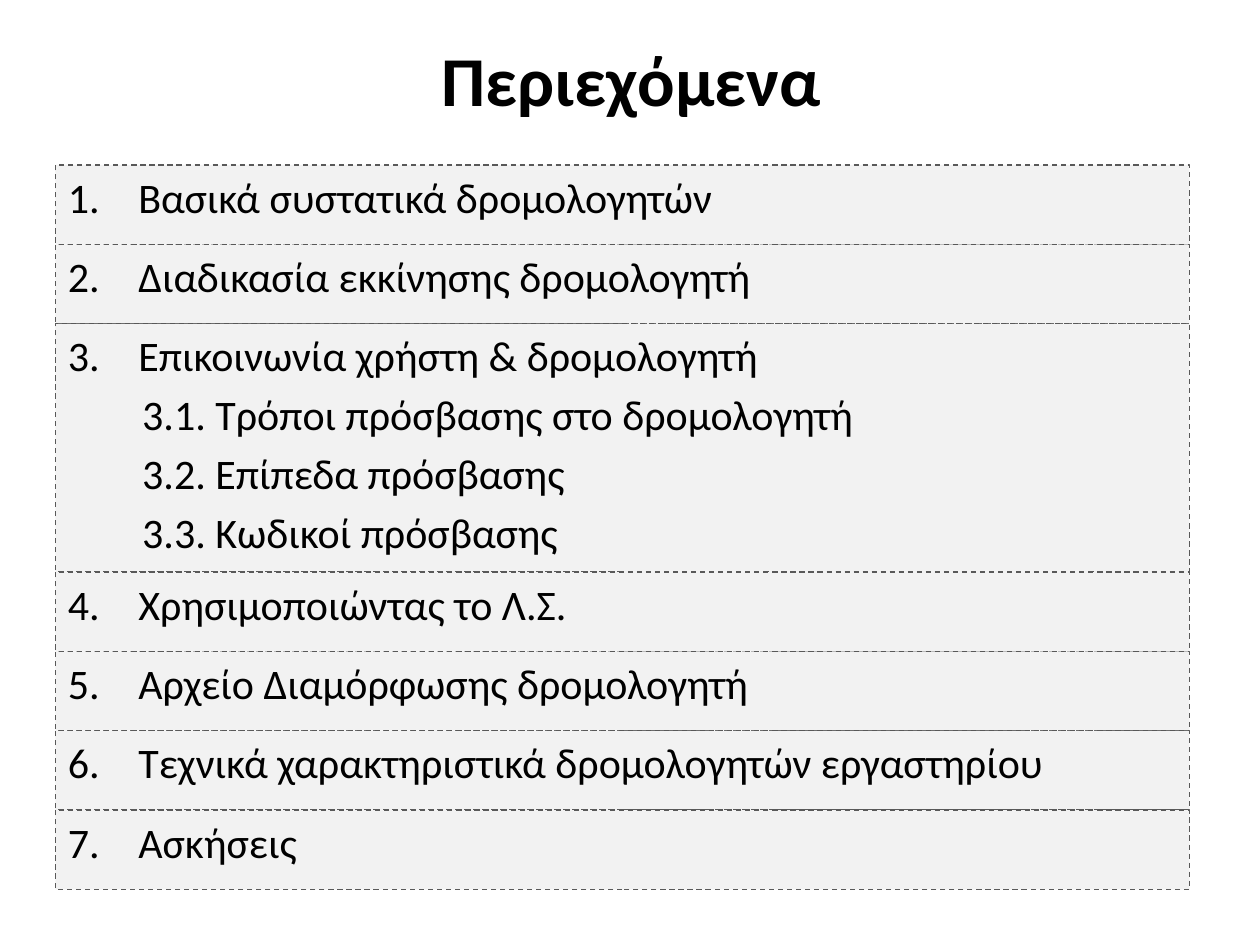
from dataclasses import dataclass

import pptx
import pptx.dml.color
import pptx.enum.dml
import pptx.enum.shapes
import pptx.enum.text
import pptx.oxml.ns
import pptx.util
from lxml import etree

Inches = pptx.util.Inches
Pt = pptx.util.Pt
Align = pptx.enum.text.PP_ALIGN
Anchor = pptx.enum.text.MSO_ANCHOR


@dataclass(frozen=True)
class Theme:
    font: str = "Calibri"
    ink: str = "000000"
    fill: str = "F2F2F2"
    edge: str = "595959"
    head: float = 40
    body: float = 24
    gap: float = 4.8


@dataclass(frozen=True)
class Topic:
    text: str
    high: float = 0.63
    subs: tuple[str, ...] = ()


THEME = Theme()
LEFT, TOP, WIDE = 0.44, 1.31, 9
TOPICS = (
    Topic("Βασικά συστατικά δρομολογητών"),
    Topic("Διαδικασία εκκίνησης δρομολογητή"),
    Topic("Επικοινωνία χρήστη & δρομολογητή", 1.97, (
        "3.1. Τρόποι πρόσβασης στο δρομολογητή",
        "3.2. Επίπεδα πρόσβασης",
        "3.3. Κωδικοί πρόσβασης",
    )),
    Topic("Χρησιμοποιώντας το Λ.Σ."),
    Topic("Αρχείο Διαμόρφωσης δρομολογητή"),
    Topic("Τεχνικά χαρακτηριστικά δρομολογητών εργαστηρίου"),
    Topic("Ασκήσεις"),
)


def color(code: str) -> pptx.dml.color.RGBColor:
    return pptx.dml.color.RGBColor.from_string(code)


def style(para, size: float, align, bold: bool = False) -> None:
    para.alignment = align
    font = para.font
    font.name, font.size, font.bold = THEME.font, Pt(size), bold
    font.color.rgb = color(THEME.ink)


def indent(para, left: float, first: float) -> None:
    props = para._p.get_or_add_pPr()
    props.set("marL", str(Inches(left)))
    props.set("indent", str(Inches(first)))


def number(para, start: int) -> None:
    mark = etree.SubElement(para._p.get_or_add_pPr(),
                            pptx.oxml.ns.qn("a:buAutoNum"))
    mark.set("type", "arabicPeriod")
    mark.set("startAt", str(start))


def draw_topic(slide, topic: Topic, num: int, top: float) -> None:
    box = slide.shapes.add_shape(
        pptx.enum.shapes.MSO_SHAPE.RECTANGLE,
        Inches(LEFT), Inches(top), Inches(WIDE), Inches(topic.high))
    box.shadow.inherit = False
    box.fill.solid()
    box.fill.fore_color.rgb = color(THEME.fill)
    box.line.color.rgb = color(THEME.edge)
    box.line.width = Pt(0.75)
    box.line.dash_style = pptx.enum.dml.MSO_LINE.DASH

    # Numbered heading
    frame = box.text_frame
    frame.word_wrap = True
    frame.vertical_anchor = Anchor.TOP
    para = frame.paragraphs[0]
    para.text = topic.text
    indent(para, 0.56, -0.56)
    number(para, num)
    style(para, THEME.body, Align.LEFT)

    # Sections under the heading
    for text in topic.subs:
        para = frame.add_paragraph()
        para.text = text
        para.level = 1
        indent(para, 0.44, 0.15)
        para.space_before = Pt(THEME.gap)
        style(para, THEME.body, Align.LEFT)


def main() -> None:
    deck = pptx.Presentation()
    deck.slide_width, deck.slide_height = Inches(10), Inches(7.5)
    slide = deck.slides.add_slide(deck.slide_layouts[5])

    # Title
    title = slide.shapes.title
    title.left, title.top = Inches(0.51), Inches(0.13)
    title.width, title.height = Inches(9), Inches(0.99)
    title.text_frame.text = "Περιεχόμενα"
    title.text_frame.vertical_anchor = Anchor.MIDDLE
    style(title.text_frame.paragraphs[0], THEME.head, Align.CENTER, True)

    # Stack of topics
    top = TOP
    for num, topic in enumerate(TOPICS, 1):
        draw_topic(slide, topic, num, top)
        top += topic.high

    deck.save("out.pptx")


if __name__ == "__main__":
    main()
